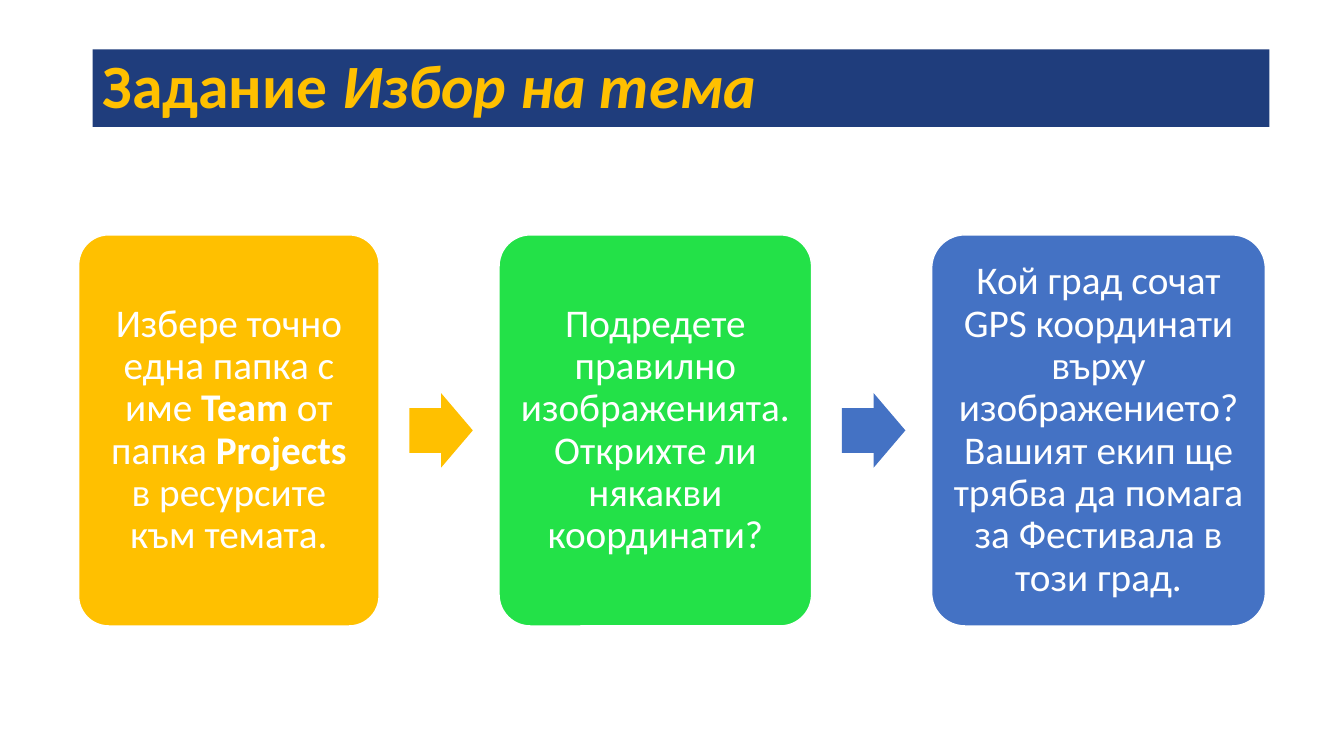
from dataclasses import dataclass

from pptx import Presentation
from pptx.dml.color import RGBColor
from pptx.enum.shapes import MSO_SHAPE
from pptx.enum.text import MSO_ANCHOR, PP_ALIGN
from pptx.util import Inches, Pt


@dataclass(frozen=True)
class Theme:
    font: str = "Calibri"
    navy: str = "1F3D7C"
    gold: str = "FFC000"
    green: str = "23E148"
    blue: str = "4472C4"
    white: str = "FFFFFF"
    title_size: int = 44
    step_size: int = 28


THEME = Theme()

PLAIN, BOLD, BOLD_ITALIC = (False, False), (True, False), (True, True)

TITLE = [("Задание ", BOLD), ("Избор на тема", BOLD_ITALIC)]

STEPS = [
    (2.98, THEME.gold, [
        ("Избере точно една папка с име ", PLAIN),
        ("Team ", BOLD),
        ("от папка ", PLAIN),
        ("Projects", BOLD),
        (" в ресурсите към темата.", PLAIN),
    ]),
    (3.1, THEME.green, [
        ("Подредете правилно изображенията. "
         "Открихте ли някакви координати?", PLAIN),
    ]),
    (3.31, THEME.blue, [
        ("Кой град сочат GPS координати върху изображението? "
         "Вашият екип ще трябва да помага за Фестивала в този град.", PLAIN),
    ]),
]
ARROW_COLORS = [THEME.gold, THEME.blue]

FLOW_LEFT, FLOW_TOP, CARD_HEIGHT = 0.78, 2.33, 3.88
ARROW_WIDTH, ARROW_HEIGHT = 0.63, 0.74
GAP_BEFORE_ARROW, GAP_AFTER_ARROW = 0.3, 0.26
CARD_INSET = 0.11


def add_filled(slide, preset, left, top, width, height, color):
    shape = slide.shapes.add_shape(
        preset, Inches(left), Inches(top), Inches(width), Inches(height))
    shape.shadow.inherit = False
    shape.fill.solid()
    shape.fill.fore_color.rgb = RGBColor.from_string(color)
    shape.line.fill.background()
    return shape


def write_runs(shape, runs, size, color, alignment):
    frame = shape.text_frame
    frame.word_wrap = True
    frame.vertical_anchor = MSO_ANCHOR.MIDDLE
    paragraph = frame.paragraphs[0]
    paragraph.alignment = alignment
    paragraph.line_spacing = 0.9
    for words, (bold, italic) in runs:
        run = paragraph.add_run()
        run.text = words
        run.font.name = THEME.font
        run.font.size = Pt(size)
        run.font.bold = bold
        run.font.italic = italic
        run.font.color.rgb = RGBColor.from_string(color)


def add_title(slide):
    banner = add_filled(
        slide, MSO_SHAPE.RECTANGLE, 0.92, 0.49, 11.67, 0.77, THEME.navy)
    write_runs(banner, TITLE, THEME.title_size, THEME.gold, PP_ALIGN.LEFT)


def add_step(slide, left, width, color, runs):
    card = add_filled(slide, MSO_SHAPE.ROUNDED_RECTANGLE,
                      left, FLOW_TOP, width, CARD_HEIGHT, color)
    card.adjustments[0] = 0.1
    card.line.color.rgb = RGBColor.from_string(THEME.white)
    card.line.width = Pt(1)
    frame = card.text_frame
    frame.margin_left = frame.margin_right = Inches(CARD_INSET)
    frame.margin_top = frame.margin_bottom = Inches(CARD_INSET)
    write_runs(card, runs, THEME.step_size, THEME.white, PP_ALIGN.CENTER)


def add_arrow(slide, left, color):
    top = FLOW_TOP + (CARD_HEIGHT - ARROW_HEIGHT) / 2
    arrow = add_filled(slide, MSO_SHAPE.RIGHT_ARROW,
                       left, top, ARROW_WIDTH, ARROW_HEIGHT, color)
    arrow.adjustments[0] = 0.6
    arrow.adjustments[1] = 0.5


def add_flow(slide):
    left = FLOW_LEFT
    for index, (width, color, runs) in enumerate(STEPS):
        add_step(slide, left, width, color, runs)
        left += width + GAP_BEFORE_ARROW
        if index < len(ARROW_COLORS):
            add_arrow(slide, left, ARROW_COLORS[index])
            left += ARROW_WIDTH + GAP_AFTER_ARROW


def main():
    presentation = Presentation()
    presentation.slide_width = Inches(13.33)
    presentation.slide_height = Inches(7.5)
    slide = presentation.slides.add_slide(presentation.slide_layouts[6])
    add_title(slide)
    add_flow(slide)
    presentation.save("out.pptx")


if __name__ == "__main__":
    main()
